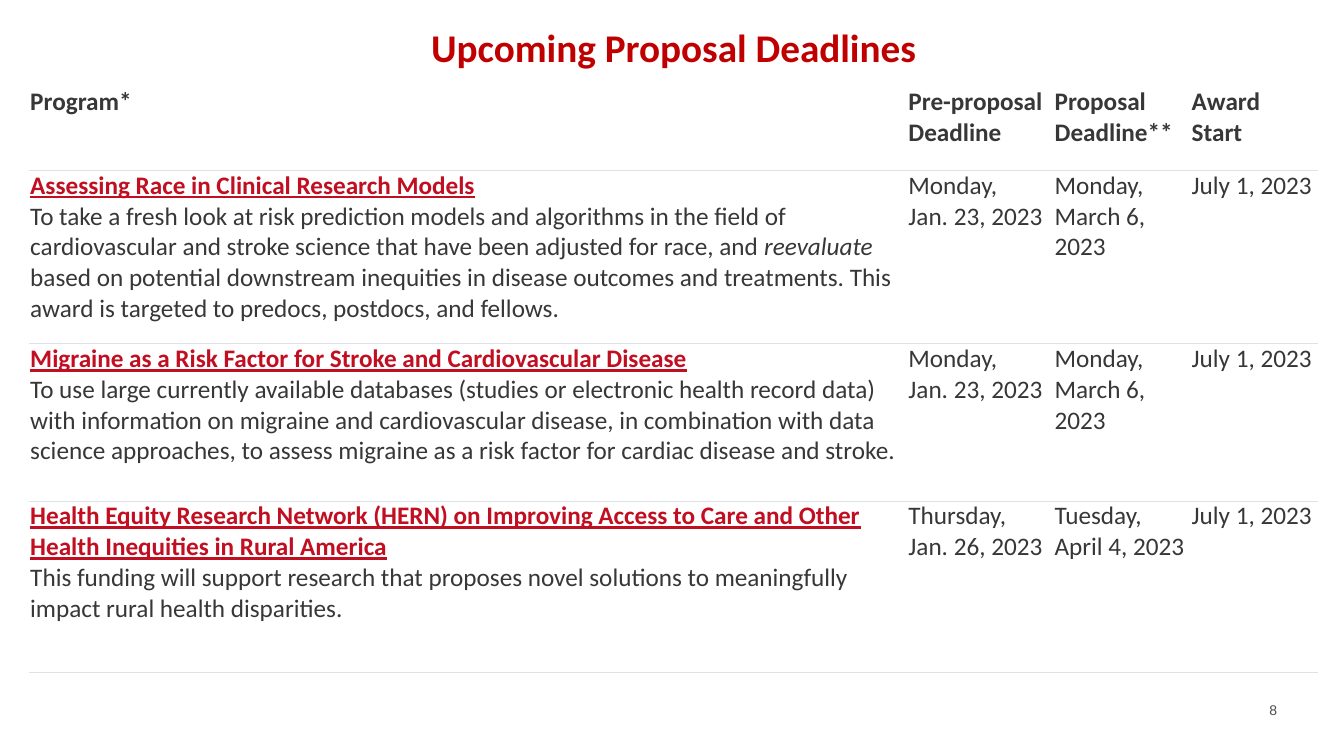
from dataclasses import dataclass

from lxml import etree
from pptx import Presentation
from pptx.dml.color import RGBColor
from pptx.enum import text
from pptx.oxml import ns
from pptx.util import Inches, Pt

INK = RGBColor(0x37, 0x37, 0x37)
TITLE_RED = RGBColor(0xC0, 0x00, 0x00)
PROGRAM_RED = RGBColor(0xC1, 0x0E, 0x20)
NUMBER_GREY = RGBColor(0x4D, 0x4D, 0x4F)
RULE_GREY = RGBColor(0xDE, 0xE2, 0xE6)
WHITE = RGBColor(0xFF, 0xFF, 0xFF)

COLUMN_WIDTHS = [8.71, 1.45, 1.36, 1.26]
ROW_HEIGHTS = [0.61, 0.83, 1.72, 1.56, 1.7]
TITLE = "Upcoming Proposal Deadlines"
HEADINGS = [
    ["Program*"],
    ["Pre-proposal", "Deadline"],
    ["Proposal", "Deadline**"],
    ["Award", "Start"],
]


@dataclass
class Span:
    words: str
    color: RGBColor = INK
    size: float = 18
    font: str = "Calibri"
    bold: bool = False
    italic: bool = False
    underline: bool = False


@dataclass
class Program:
    name: str
    summary: list[Span]
    dates: list[list[str]]


PROGRAMS = [
    Program(
        "Assessing Race in Clinical Research Models",
        [
            Span("To take a fresh look at risk prediction models and algorithms in the "
                 "field of cardiovascular and stroke science that have been adjusted for "
                 "race, and "),
            Span("reevaluate", italic=True),
            Span(" based on potential downstream inequities in disease outcomes and "
                 "treatments. This award is targeted to predocs, postdocs, and fellows."),
        ],
        [["Monday,", "Jan. 23, 2023"], ["Monday,", "March 6, 2023"], ["July 1, 2023"]],
    ),
    Program(
        "Migraine as a Risk Factor for Stroke and Cardiovascular Disease",
        [
            Span("To use large currently available databases (studies or electronic health "
                 "record data) with information on migraine and cardiovascular disease, in "
                 "combination with data science approaches, to assess migraine as a risk "
                 "factor for cardiac disease and stroke."),
        ],
        [["Monday,", "Jan. 23, 2023"], ["Monday,", "March 6, 2023"], ["July 1, 2023"]],
    ),
    Program(
        "Health Equity Research Network (HERN) on Improving Access to Care and Other "
        "Health Inequities in Rural America",
        [
            Span("This funding will support research that proposes novel solutions to "
                 "meaningfully impact rural health disparities."),
        ],
        [["Thursday,", "Jan. 26, 2023"], ["Tuesday,", "April 4, 2023"], ["July 1, 2023"]],
    ),
]


def add_span(para, span: Span) -> None:
    run = para.add_run()
    run.text = span.words
    font = run.font
    font.name, font.size = span.font, Pt(span.size)
    font.bold, font.italic, font.underline = span.bold, span.italic, span.underline
    font.color.rgb = span.color


def add_lines(para, lines: list[list[Span]]) -> None:
    """Write lines of spans, parted by line breaks."""
    for index, line in enumerate(lines):
        if index:
            para.add_line_break()
        for span in line:
            add_span(para, span)


def style_cell(cell, rules: list[str]) -> None:
    """Set margins, white fill and the named border rules."""
    cell.margin_left = cell.margin_right = Inches(0.01)
    cell.margin_top = cell.margin_bottom = 0
    cell.vertical_anchor = text.MSO_ANCHOR.TOP
    cell.fill.solid()
    cell.fill.fore_color.rgb = WHITE
    properties = cell._tc.get_or_add_tcPr()
    for index, rule in enumerate(rules):
        line = etree.Element(ns.qn(f"a:{rule}"), w=str(Pt(0.5)))
        fill = etree.SubElement(line, ns.qn("a:solidFill"))
        etree.SubElement(fill, ns.qn("a:srgbClr"), val=str(RULE_GREY))
        properties.insert(index, line)


def add_deadline_table(page) -> None:
    frame = page.shapes.add_table(
        len(ROW_HEIGHTS), len(COLUMN_WIDTHS), Inches(0.29), Inches(0.25),
        Inches(sum(COLUMN_WIDTHS)), Inches(sum(ROW_HEIGHTS)))
    table = frame.table
    table.first_row = table.horz_banding = False
    for column, width in zip(table.columns, COLUMN_WIDTHS):
        column.width = Inches(width)
    for index, (row, height) in enumerate(zip(table.rows, ROW_HEIGHTS)):
        row.height = Inches(height)
        rules = [[], ["lnB"]][index] if index < 2 else ["lnT", "lnB"]
        for cell in row.cells:
            style_cell(cell, rules)

    # Title row
    title = table.cell(0, 0)
    title.merge(table.cell(0, len(COLUMN_WIDTHS) - 1))
    para = title.text_frame.paragraphs[0]
    para.alignment = text.PP_ALIGN.CENTER
    add_span(para, Span(TITLE, TITLE_RED, 28, bold=True))

    # Column headings
    for column, heading in enumerate(HEADINGS):
        box = table.cell(1, column).text_frame
        for index, words in enumerate(heading):
            para = box.add_paragraph() if index else box.paragraphs[0]
            add_span(para, Span(words, bold=True))

    # Programs and their dates
    for row, program in enumerate(PROGRAMS, start=2):
        name = Span(program.name, PROGRAM_RED, bold=True, underline=True)
        contents = [[[name], program.summary]]
        contents += [[[Span(words)] for words in date] for date in program.dates]
        for column, lines in enumerate(contents):
            add_lines(table.cell(row, column).text_frame.paragraphs[0], lines)


def add_page_number(page) -> None:
    box = page.shapes.add_textbox(Inches(12.49), Inches(6.91), Inches(0.39), Inches(0.27))
    box.text_frame.word_wrap = False
    add_span(box.text_frame.paragraphs[0], Span("8", NUMBER_GREY, 10, "Arial"))


def main() -> None:
    deck = Presentation()
    deck.slide_width, deck.slide_height = Inches(13.33), Inches(7.5)
    page = deck.slides.add_slide(deck.slide_layouts[6])
    add_deadline_table(page)
    add_page_number(page)
    deck.save("out.pptx")


if __name__ == "__main__":
    main()
